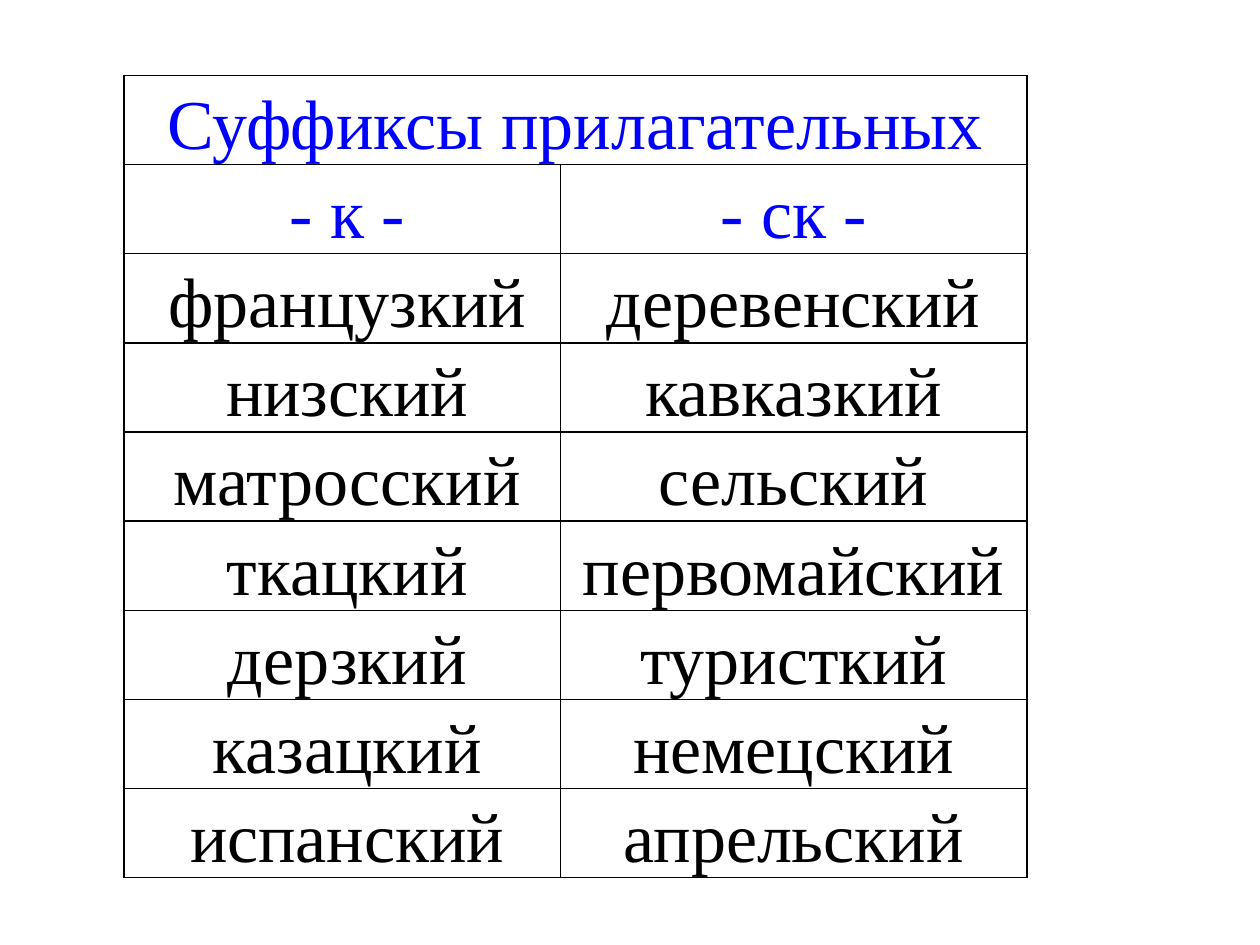
from lxml import etree
from pptx import Presentation
from pptx.dml.color import RGBColor
from pptx.enum import text
from pptx.oxml import ns
from pptx.util import Cm, Pt

BLUE, BLACK = "0000FF", "000000"


def write(cell, words, color=BLACK, size=40, font="Times New Roman", right=0.2):
    cell.margin_left, cell.margin_right = Cm(0.2), Cm(right)
    cell.margin_top = cell.margin_bottom = 0
    para = cell.text_frame.paragraphs[0]
    para.alignment = text.PP_ALIGN.CENTER
    para.line_spacing = 1.15
    para.space_after = Pt(10)
    run = para.add_run()
    run.text = words
    run.font.name, run.font.size = font, Pt(size)
    run.font.color.rgb = RGBColor.from_string(color)


def frame(cell, color=BLACK, width=1):
    """Draw all four borders of a cell and leave it unfilled."""
    props = cell._tc.get_or_add_tcPr()
    for side in ("a:lnL", "a:lnR", "a:lnT", "a:lnB"):
        line = etree.SubElement(props, ns.qn(side), w=str(Pt(width)))
        fill = etree.SubElement(line, ns.qn("a:solidFill"))
        etree.SubElement(fill, ns.qn("a:srgbClr"), val=color)
    cell.fill.background()


pairs = [
    ("- к -", "- ск -"),
    ("французкий", "деревенский"),
    ("низский", "кавказкий"),
    ("матросский", "сельский"),
    ("ткацкий", "первомайский"),
    ("дерзкий", "туристкий"),
    ("казацкий", "немецский"),
    ("испанский", "апрельский"),
]

deck = Presentation()
deck.slide_width, deck.slide_height = Cm(25.4), Cm(19.05)
slide = deck.slides.add_slide(deck.slide_layouts[6])

count = len(pairs) + 1
table = slide.shapes.add_table(
    count, 2, Cm(2.5), Cm(1.52), Cm(18.2), Cm(1.5 * count)).table
table.first_row = table.horz_banding = False
table.columns[0].width, table.columns[1].width = Cm(8.8), Cm(9.4)
for row in table.rows:
    row.height = Cm(1.5)
    for cell in row.cells:
        frame(cell)

head = table.cell(0, 0)
head.merge(table.cell(0, 1))
write(head, "Суффиксы прилагательных", color=BLUE)

for r, (left, right) in enumerate(pairs, 1):
    color = BLUE if r == 1 else BLACK
    write(table.cell(r, 0), left, color=color, right=0)
    write(table.cell(r, 1), right, color=color)

deck.save("out.pptx")
